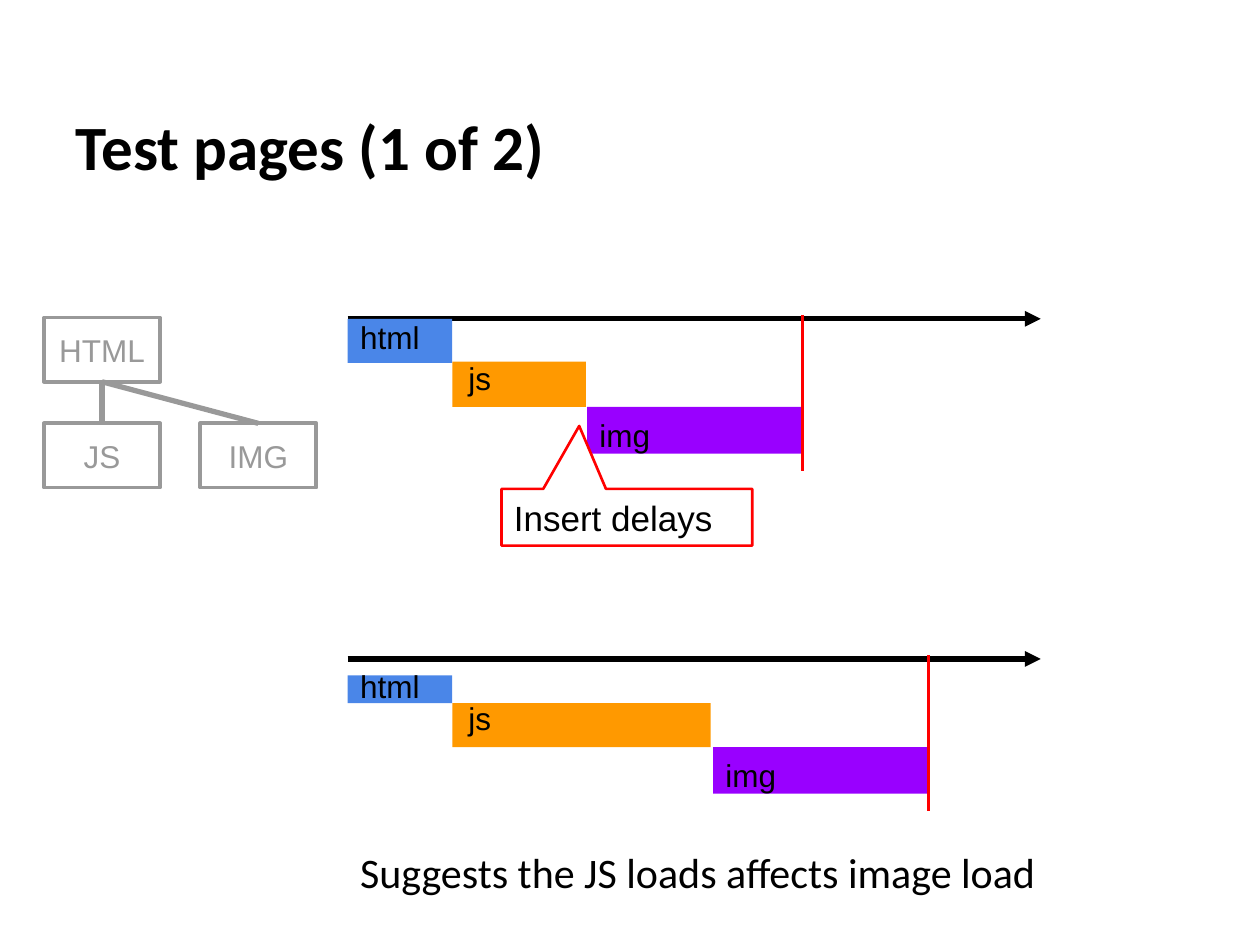
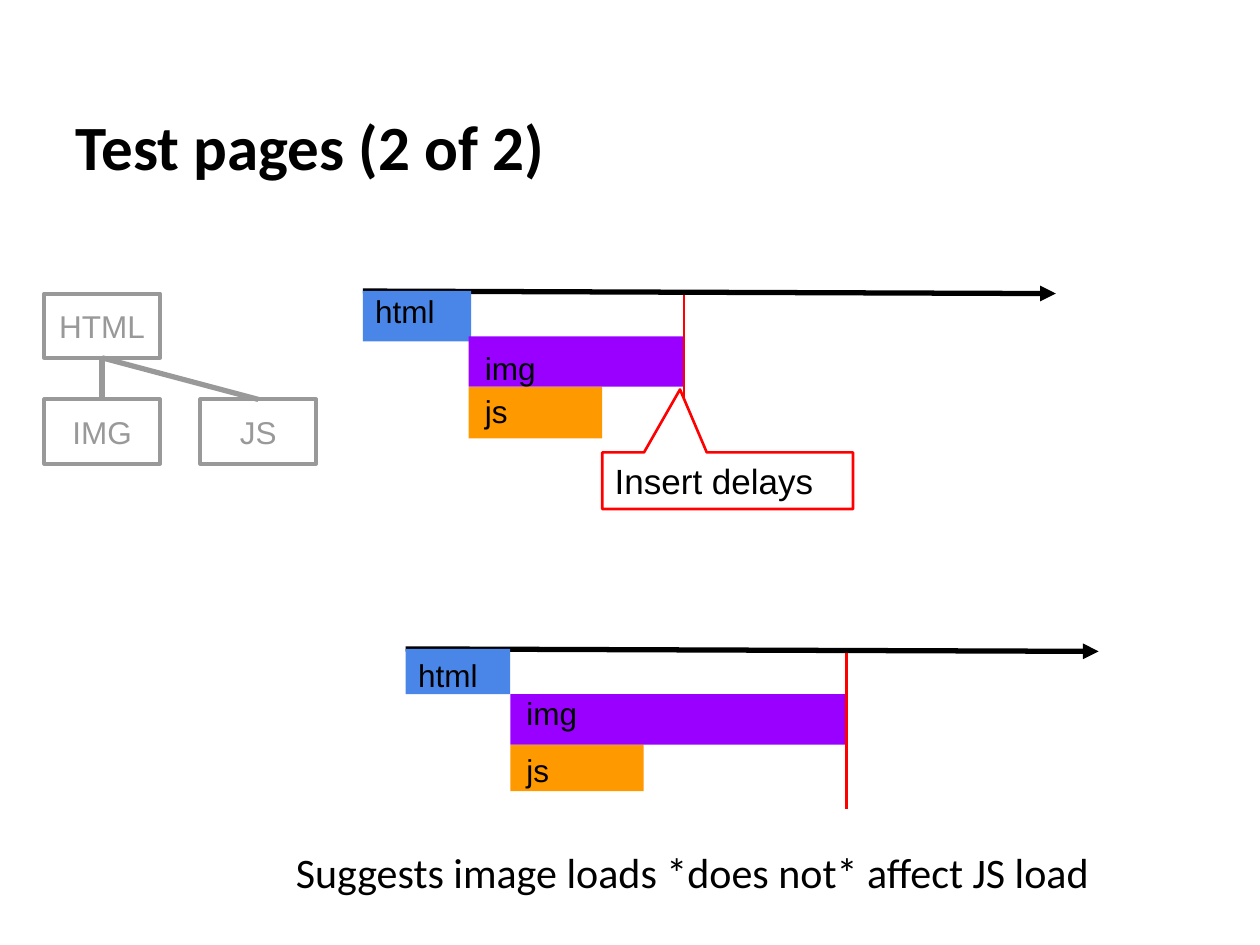
"""Build two slides on page load timelines with inserted delays."""
from pptx import Presentation
from pptx.dml.color import RGBColor
from pptx.enum import shapes as kinds, text as txt
from pptx.oxml.ns import qn
from pptx.util import Inches, Pt
from lxml import etree

COLORS = {"ink": "000000", "paper": "FFFFFF", "tree": "999999", "finish": "FF0000",
          "html": "4A86E8", "js": "FF9900", "img": "9900FF"}
AXIS_LENGTH = 5.5
FINISH_LENGTH = 1.24
LABEL_SIZE = (0.86, 0.45)
NODE_SIZE = (0.92, 0.51)
NODE_LEFT, NODE_STEP_X, NODE_STEP_Y = 0.35, 1.24, 0.84

# bars: resource, (left, top, width, height), (label left, label top)
PAGES = [
    {
        "title": "Test pages (1 of 2)",
        "tree": {"top": 2.52, "root": "HTML", "children": ["JS", "IMG"]},
        "timelines": [
            {"axis": (2.76, 2.53), "slope": 0, "finish": (6.37, 2.5), "bars": [
                ("html", (2.76, 2.53, 0.83, 0.35), (2.76, 2.42)),
                ("js", (3.59, 2.87, 1.06, 0.36), (3.62, 2.75)),
                ("img", (4.66, 3.23, 1.71, 0.37), (4.66, 3.2))]},
            {"axis": (2.76, 5.23), "slope": 0, "finish": (7.37, 5.2), "bars": [
                ("html", (2.76, 5.36, 0.83, 0.22), (2.76, 5.19)),
                ("js", (3.59, 5.58, 2.05, 0.35), (3.62, 5.45)),
                ("img", (5.66, 5.93, 1.71, 0.37), (5.66, 5.9))]},
        ],
        "delay": ("Insert delays", (3.98, 3.88)),
        "finding": ("Suggests the JS loads affects image load", (2.76, 6.67, 5.63, 0.5)),
    },
    {
        "title": "Test pages (2 of 2)",
        "tree": {"top": 2.33, "root": "HTML", "children": ["IMG", "JS"]},
        "timelines": [
            {"axis": (2.88, 2.31), "slope": 0.02, "finish": (5.43, 2.34), "bars": [
                ("html", (2.88, 2.31, 0.86, 0.4), (2.88, 2.22)),
                ("js", (3.72, 3.07, 1.06, 0.41), (3.75, 3.01)),
                ("img", (3.72, 2.67, 1.71, 0.4), (3.75, 2.67))]},
            {"axis": (3.22, 5.15), "slope": 0.02, "finish": (6.72, 5.18), "bars": [
                ("html", (3.22, 5.15, 0.83, 0.36), (3.22, 5.11)),
                ("js", (4.05, 5.91, 1.06, 0.37), (4.08, 5.86)),
                ("img", (4.05, 5.51, 2.67, 0.4), (4.08, 5.41))]},
        ],
        "delay": ("Insert delays", (4.78, 3.59)),
        "finding": ("Suggests image loads *does not* affect JS load", (2.25, 6.67, 6.57, 0.5)),
    },
]


def rgb(name):
    return RGBColor.from_string(COLORS[name])


def inches(values):
    return [Inches(value) for value in values]


def write(shape, words, size, font="Arial", color="ink", bold=False, inset=0.1,
          anchor=txt.MSO_ANCHOR.TOP, align=txt.PP_ALIGN.LEFT, wrap=True):
    frame = shape.text_frame
    frame.auto_size = txt.MSO_AUTO_SIZE.NONE
    frame.word_wrap = wrap
    frame.vertical_anchor = anchor
    frame.margin_left = frame.margin_right = Inches(0.1)
    frame.margin_top = frame.margin_bottom = Inches(inset)
    paragraph = frame.paragraphs[0]
    paragraph.alignment = align
    run = paragraph.add_run()
    run.text = words
    run.font.name, run.font.size, run.font.bold = font, Pt(size), bold
    run.font.color.rgb = rgb(color)


def add_box(slide, place, fill, outline=None, width=0, kind=kinds.MSO_SHAPE.RECTANGLE):
    box = slide.shapes.add_shape(kind, *inches(place))
    box.shadow.inherit = False
    box.fill.solid()
    box.fill.fore_color.rgb = rgb(fill)
    if outline:
        box.line.color.rgb = rgb(outline)
        box.line.width = Pt(width)
    else:
        box.line.fill.background()
    return box


def add_line(slide, start, end, color, width, arrow=False):
    line = slide.shapes.add_connector(kinds.MSO_CONNECTOR.STRAIGHT, *inches(start + end))
    line.line.color.rgb = rgb(color)
    line.line.width = Pt(width)
    if arrow:
        etree.SubElement(line.line._get_or_add_ln(), qn("a:tailEnd"), type="triangle")
    etree.SubElement(line._element.spPr, qn("a:effectLst"))
    return line


def add_tree(slide, top, root, children):
    def add_node(name, column, row):
        place = (NODE_LEFT + column * NODE_STEP_X, top + row * NODE_STEP_Y) + NODE_SIZE
        node = add_box(slide, place, "paper", "tree", 2.25)
        write(node, name, 18, color="tree", anchor=txt.MSO_ANCHOR.MIDDLE,
              align=txt.PP_ALIGN.CENTER)
        return node

    parent = add_node(root, 0, 0)
    for column, name in enumerate(children):
        child = add_node(name, column, 1)
        branch = add_line(slide, (0, 0), (1, 1), "tree", 3)
        branch.begin_connect(parent, 2)
        branch.end_connect(child, 0)


def add_timeline(slide, axis, slope, finish, bars):
    left, top = axis
    add_line(slide, axis, (left + AXIS_LENGTH, top + slope), "ink", 3, arrow=True)
    for resource, place, _ in bars:
        add_box(slide, place, resource)
    x, y = finish
    add_line(slide, finish, (x, y + FINISH_LENGTH), "finish", 1.5)
    for resource, _, corner in bars:
        label = slide.shapes.add_textbox(*inches(corner + LABEL_SIZE))
        write(label, resource, 18)


def add_page(deck, page):
    slide = deck.slides.add_slide(deck.slide_layouts[5])
    title = slide.shapes.title
    title.left, title.top, title.width, title.height = inches((0.5, 0.3, 9, 1.25))
    write(title, page["title"], 36, "Calibri", bold=True, anchor=txt.MSO_ANCHOR.BOTTOM)
    add_tree(slide, **page["tree"])
    for timeline in page["timelines"]:
        add_timeline(slide, **timeline)
    words, corner = page["delay"]
    delay = add_box(slide, corner + (1.99, 0.45), "paper", "finish", 1.5,
                    kinds.MSO_SHAPE.RECTANGULAR_CALLOUT)
    delay.adjustments[0], delay.adjustments[1] = -0.19, -1.61
    write(delay, words, 20, anchor=txt.MSO_ANCHOR.MIDDLE)
    words, place = page["finding"]
    finding = slide.shapes.add_textbox(*inches(place))
    write(finding, words, 24, "Calibri", inset=0.05, wrap=False)


def main():
    deck = Presentation()
    deck.slide_width, deck.slide_height = Inches(10), Inches(7.5)
    for page in PAGES:
        add_page(deck, page)
    deck.save("out.pptx")


if __name__ == "__main__":
    main()
